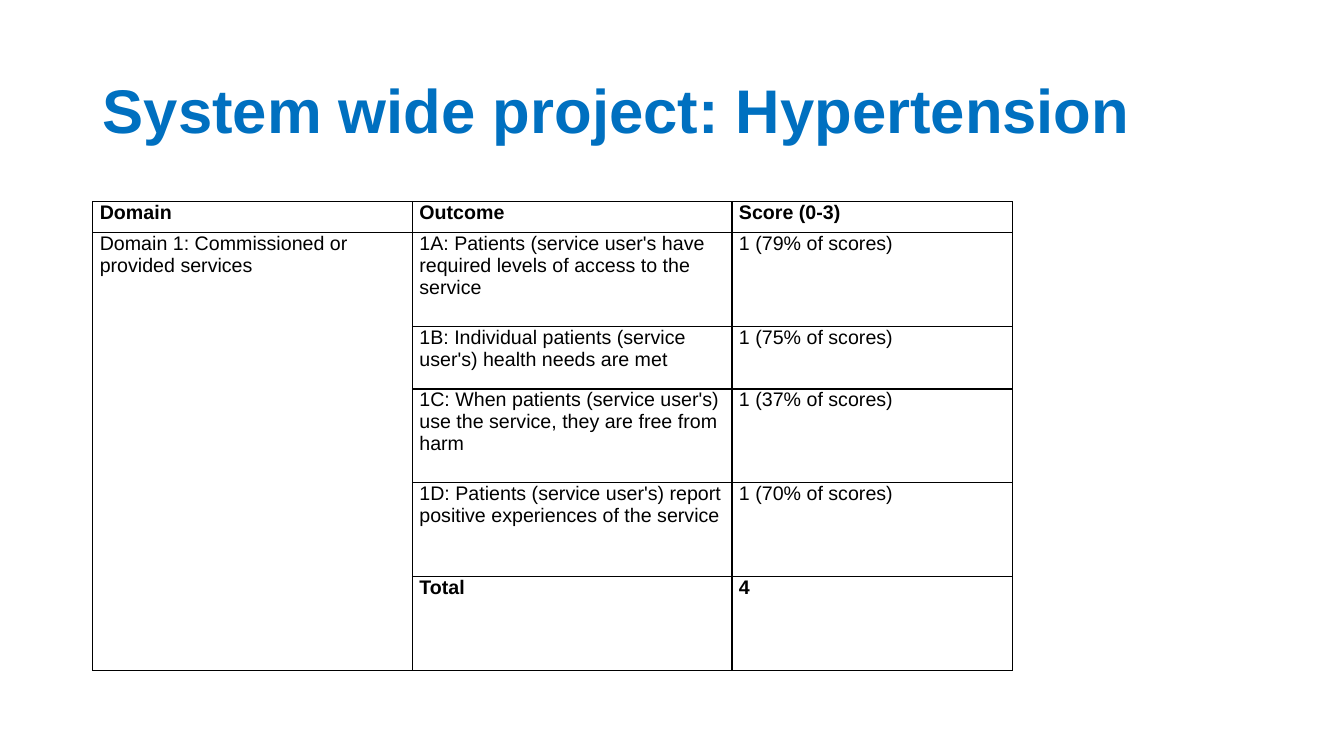
"""Build the hypertension project slide with its table of outcome scores."""
from lxml.etree import SubElement
from pptx import Presentation
from pptx.dml.color import RGBColor
from pptx.enum.text import MSO_ANCHOR, PP_ALIGN
from pptx.oxml.ns import qn
from pptx.util import Inches, Pt

TITLE = "System wide project: Hypertension"
ROWS = [
    ("Domain", "Outcome", "Score (0-3)"),
    ("Domain 1: Commissioned or provided services",
     "1A: Patients (service user's have required levels of access to the service",
     "1 (79% of scores)"),
    ("", "1B: Individual patients (service user's) health needs are met",
     "1 (75% of scores)"),
    ("", "1C: When patients (service user's) use the service, they are free from harm",
     "1 (37% of scores)"),
    ("", "1D: Patients (service user's) report positive experiences of the service",
     "1 (70% of scores)"),
    ("", "Total", "4"),
]
BOLD_ROWS = (0, len(ROWS) - 1)
COLORS = {"title": "0070C0", "text": "000000", "border": "000000"}
FONT = "Arial"
LEFT, TABLE_TOP = 0.92, 2
COLUMN_WIDTHS = [3.17, 3.17, 2.78]
LINE_HEIGHT = 0.31
ROW_LINES = [1, 3, 2, 3, 3, 3]


def format_font(font, size, color, bold):
    font.name = FONT
    font.size = Pt(size)
    font.bold = bold
    font.color.rgb = RGBColor.from_string(COLORS[color])


def add_borders(cell):
    properties = cell._tc.get_or_add_tcPr()
    for position, side in enumerate(("a:lnL", "a:lnR", "a:lnT", "a:lnB")):
        line = SubElement(properties, qn(side), w=str(Pt(1)))
        fill = SubElement(line, qn("a:solidFill"))
        SubElement(fill, qn("a:srgbClr"), val=COLORS["border"])
        properties.insert(position, line)


def add_title(slide):
    title = slide.shapes.title
    title.left, title.top = Inches(LEFT), Inches(0.4)
    title.width, title.height = Inches(11.5), Inches(1.45)
    frame = title.text_frame
    frame.text = TITLE
    frame.word_wrap = True
    frame.vertical_anchor = MSO_ANCHOR.MIDDLE
    paragraph = frame.paragraphs[0]
    paragraph.alignment = PP_ALIGN.LEFT
    paragraph.line_spacing = 0.9
    format_font(paragraph.runs[0].font, 44, "title", True)


def add_score_table(slide):
    heights = [LINE_HEIGHT * lines for lines in ROW_LINES]
    table = slide.shapes.add_table(
        len(ROWS), len(COLUMN_WIDTHS), Inches(LEFT), Inches(TABLE_TOP),
        Inches(sum(COLUMN_WIDTHS)), Inches(sum(heights))).table
    table.horz_banding = False
    for column, width in zip(table.columns, COLUMN_WIDTHS):
        column.width = Inches(width)
    for row, height in zip(table.rows, heights):
        row.height = Inches(height)
    for row_index, texts in enumerate(ROWS):
        for column_index, text in enumerate(texts):
            cell = table.cell(row_index, column_index)
            cell.text_frame.text = text
            cell.margin_left = cell.margin_right = Inches(0.07)
            cell.margin_top = cell.margin_bottom = 0
            cell.vertical_anchor = MSO_ANCHOR.TOP
            cell.fill.background()
            add_borders(cell)
            format_font(cell.text_frame.paragraphs[0].font, 14, "text",
                        row_index in BOLD_ROWS)
            for run in cell.text_frame.paragraphs[0].runs:
                format_font(run.font, 14, "text", row_index in BOLD_ROWS)
    table.cell(1, 0).merge(table.cell(len(ROWS) - 1, 0))


def main():
    presentation = Presentation()
    presentation.slide_width, presentation.slide_height = Inches(13.33), Inches(7.5)
    slide = presentation.slides.add_slide(presentation.slide_layouts[5])
    add_title(slide)
    add_score_table(slide)
    presentation.save("out.pptx")


if __name__ == "__main__":
    main()
